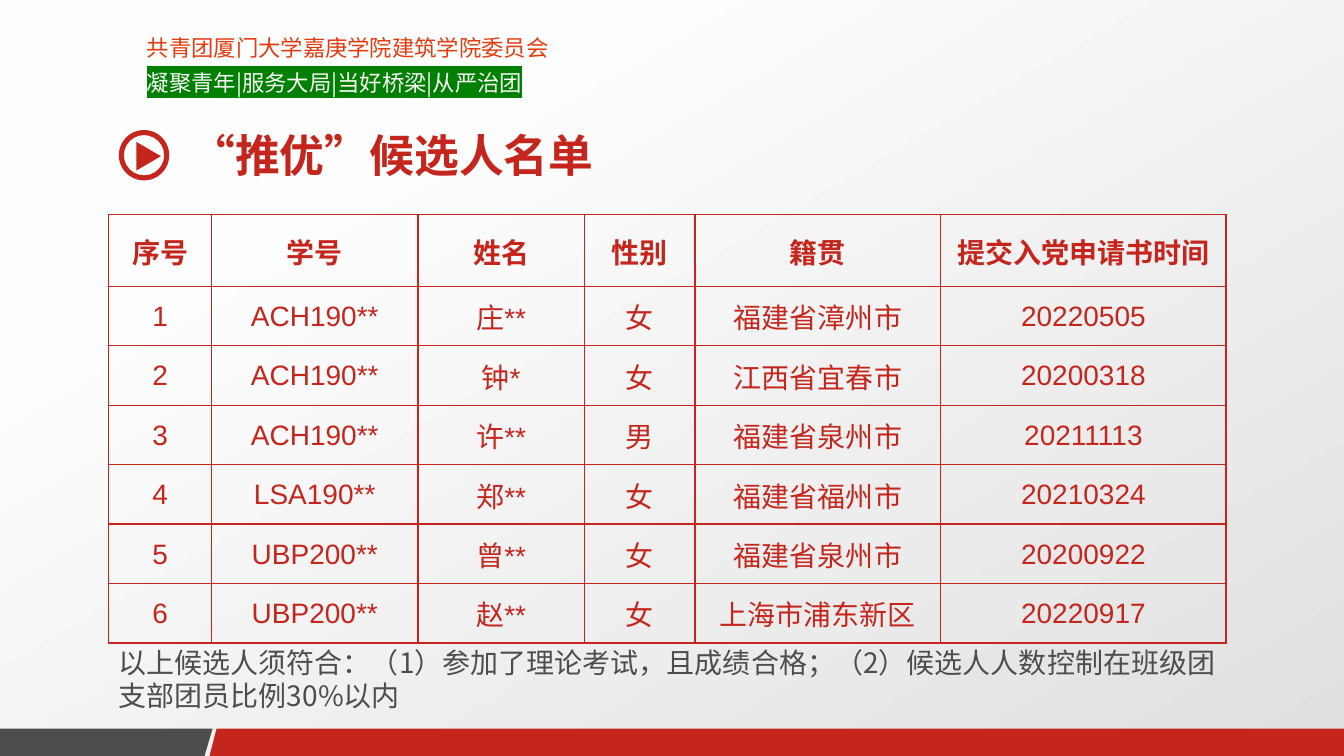
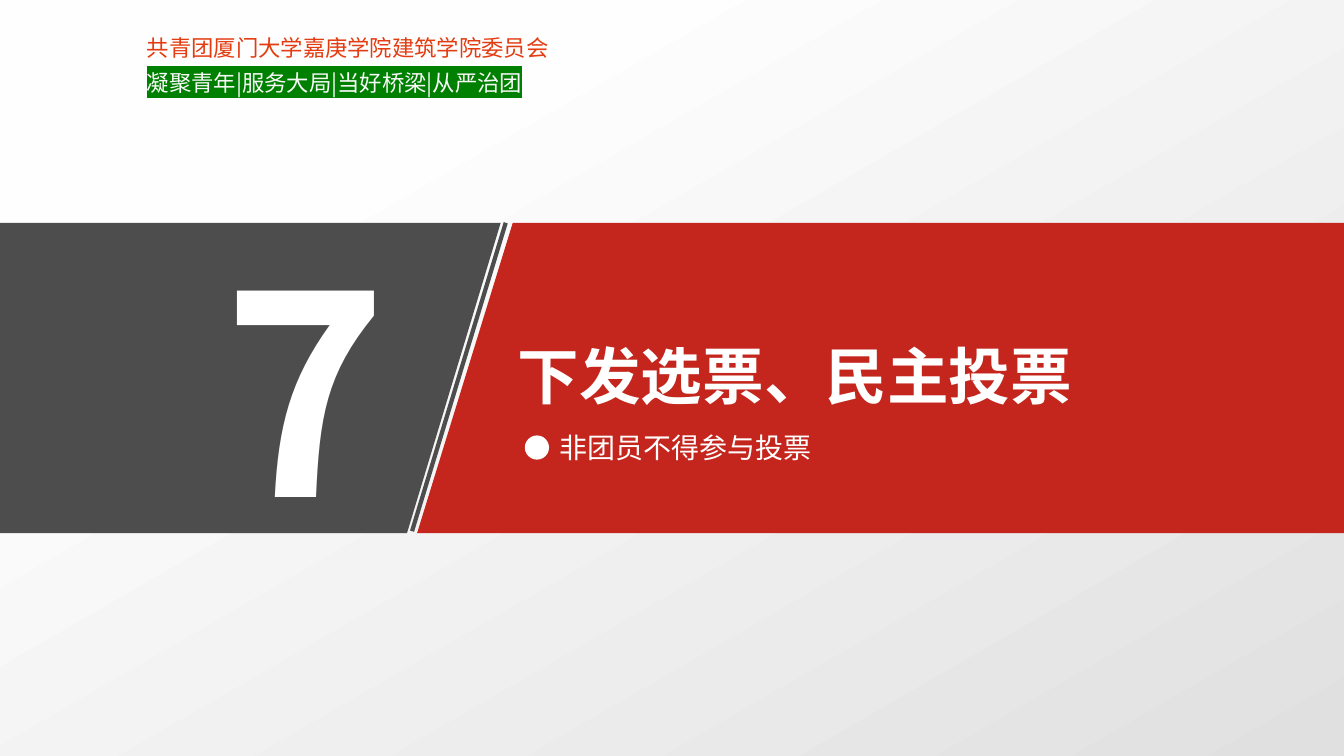
from lxml import etree
from pptx import Presentation
from pptx.dml.color import RGBColor
from pptx.enum import shapes, text
from pptx.oxml.ns import qn
from pptx.util import Inches, Pt

RED = RGBColor(0xC4, 0x26, 0x1D)
GRAY = RGBColor(0x4D, 0x4D, 0x4D)
ORANGE = RGBColor(0xE4, 0x3C, 0x11)
GREEN = RGBColor(0x00, 0x80, 0x00)
WHITE = RGBColor(0xFF, 0xFF, 0xFF)
OFF_WHITE = RGBColor(0xF8, 0xF8, 0xF8)
GRADIENT = ((0.23, RGBColor(0xFE, 0xFE, 0xFE)), (1, RGBColor(0xE0, 0xE0, 0xE0)))

FONT = "Noto Sans CJK SC"
TABLE_FONT = "Arial"
WIDTH, HEIGHT = 13.34, 7.5

COLUMN_WIDTHS = (1.02, 2.05, 1.65, 1.1, 2.44, 2.83)
HEADER_HEIGHT, ROW_HEIGHT = 0.71, 0.59
CANDIDATES = (
    ("序号", "学号", "姓名", "性别", "籍贯", "提交入党申请书时间"),
    ("1", "ACH190**", "庄**", "女", "福建省漳州市", "20220505"),
    ("2", "ACH190**", "钟*", "女", "江西省宜春市", "20200318"),
    ("3", "ACH190**", "许**", "男", "福建省泉州市", "20211113"),
    ("4", "LSA190**", "郑**", "女", "福建省福州市", "20210324"),
    ("5", "UBP200**", "曾**", "女", "福建省泉州市", "20200922"),
    ("6", "UBP200**", "赵**", "女", "上海市浦东新区", "20220917"),
)


# Shared helpers
def format_runs(paragraph, size, color, bold=False, font=FONT):
    for run in paragraph.runs:
        run.font.size = Pt(size)
        run.font.bold = bold
        run.font.color.rgb = color
        run.font.name = font
        latin = run.font._element.find(qn("a:latin"))
        east_asian = etree.Element(qn("a:ea"), typeface=FONT)
        latin.addnext(east_asian)


def highlight_runs(paragraph, color):
    for run in paragraph.runs:
        highlight = etree.Element(qn("a:highlight"))
        etree.SubElement(highlight, qn("a:srgbClr"), val=str(color))
        run.font._element.find(qn("a:solidFill")).addnext(highlight)


def set_text(shape, box, wording, size, color, bold=False, wrap=True):
    """Place a text box or placeholder in front and fill it."""
    shape.left, shape.top, shape.width, shape.height = map(Inches, box)
    shape.element.getparent().append(shape.element)
    frame = shape.text_frame
    frame.text = wording
    frame.word_wrap = wrap
    frame.auto_size = text.MSO_AUTO_SIZE.SHAPE_TO_FIT_TEXT
    frame.vertical_anchor = text.MSO_ANCHOR.TOP
    for paragraph in frame.paragraphs:
        paragraph.alignment = text.PP_ALIGN.LEFT
        paragraph.space_before = Pt(0)
        format_runs(paragraph, size, color, bold)
    return shape


def add_text(slide, box, *args, **options):
    shape = slide.shapes.add_textbox(*map(Inches, box))
    return set_text(shape, box, *args, **options)


def fill_plain(shape, color):
    shape.shadow.inherit = False
    shape.fill.solid()
    shape.fill.fore_color.rgb = color
    shape.line.fill.background()
    return shape


def add_preset(slide, preset, box, color):
    return fill_plain(slide.shapes.add_shape(preset, *map(Inches, box)), color)


def add_polygon(slide, points, color):
    corners = [(Inches(x), Inches(y)) for x, y in points]
    builder = slide.shapes.build_freeform(*corners[0])
    builder.add_line_segments(corners[1:], close=True)
    return fill_plain(builder.convert_to_shape(), color)


def add_slanted_band(slide, top, bottom, gray_edge, red_edge):
    """Gray and red halves; each edge gives its x at top and bottom."""
    add_polygon(slide, ((red_edge[0], top), (WIDTH, top),
                        (WIDTH, bottom), (red_edge[1], bottom)), RED)
    add_polygon(slide, ((0, top), (gray_edge[0], top),
                        (gray_edge[1], bottom), (0, bottom)), GRAY)


# Master: background and header
def style_master(master):
    fill = master.background.fill
    fill.gradient()
    fill.gradient_angle = 300
    for stop, (position, color) in zip(fill.gradient_stops, GRADIENT):
        stop.position = position
        stop.color.rgb = color


def move_header_to_master(slide, master):
    header = add_text(slide, (1.36, 0.29, 5.98, 0.72),
                      "共青团厦门大学嘉庚学院建筑学院委员会\n凝聚青年|服务大局|当好桥梁|从严治团",
                      16, ORANGE)
    for paragraph in header.text_frame.paragraphs:
        paragraph.alignment = text.PP_ALIGN.JUSTIFY
        paragraph.space_after = Pt(6)
    motto = header.text_frame.paragraphs[1]
    for run in motto.runs:
        run.font.color.rgb = OFF_WHITE
    highlight_runs(motto, GREEN)
    master.shapes.element.append(header.element)


# Candidate list
def add_play_icon(slide, left, top, size):
    ring = add_preset(slide, shapes.MSO_SHAPE.DONUT, (left, top, size, size), RED)
    ring.adjustments[0] = 0.1
    base, depth = 0.57 * size, 0.49 * size
    center_x, center_y = left + 0.59 * size, top + 0.52 * size
    arrow = add_preset(slide, shapes.MSO_SHAPE.ISOSCELES_TRIANGLE,
                       (center_x - base / 2, center_y - depth / 2, base, depth), RED)
    arrow.rotation = 90


def style_cell(cell, wording, bold):
    cell.text = wording
    cell.vertical_anchor = text.MSO_ANCHOR.MIDDLE
    cell.margin_left = cell.margin_right = cell.margin_top = Inches(0.01)
    cell.margin_bottom = 0
    cell.fill.background()
    paragraph = cell.text_frame.paragraphs[0]
    paragraph.alignment = text.PP_ALIGN.CENTER
    format_runs(paragraph, 20, RED, bold, TABLE_FONT)
    properties = cell._tc.get_or_add_tcPr()
    for index, side in enumerate(("lnL", "lnR", "lnT", "lnB")):
        border = etree.Element(qn("a:" + side), w=str(Pt(1)))
        solid = etree.SubElement(border, qn("a:solidFill"))
        etree.SubElement(solid, qn("a:srgbClr"), val=str(RED))
        properties.insert(index, border)


def add_candidate_table(slide, left, top):
    row_heights = [HEADER_HEIGHT] + [ROW_HEIGHT] * (len(CANDIDATES) - 1)
    table = slide.shapes.add_table(
        len(CANDIDATES), len(COLUMN_WIDTHS), Inches(left), Inches(top),
        Inches(sum(COLUMN_WIDTHS)), Inches(sum(row_heights))).table
    table.first_row = table.horz_banding = False
    for column, width in zip(table.columns, COLUMN_WIDTHS):
        column.width = Inches(width)
    for index, (row, height) in enumerate(zip(table.rows, row_heights)):
        row.height = Inches(height)
        for cell, wording in zip(row.cells, CANDIDATES[index]):
            style_cell(cell, wording, bold=index == 0)


def build_candidate_slide(slide):
    add_slanted_band(slide, 7.23, HEIGHT, (2.11, 2.03), (2.15, 2.08))
    add_candidate_table(slide, 1.08, 2.13)
    set_text(slide.shapes.title, (1.79, 1.22, 10.32, 0.64),
             "“推优”候选人名单", 32, RED, bold=True)
    add_play_icon(slide, 1.18, 1.29, 0.5)
    add_text(slide, (1.08, 6.35, 11.26, 0.77),
             "以上候选人须符合：（1）参加了理论考试，且成绩合格；"
             "（2）候选人人数控制在班级团支部团员比例30%以内", 20, GRAY)


# Section divider
def build_section_slide(slide):
    top, bottom = 2.21, 5.29
    add_slanted_band(slide, top, bottom, (4.97, 4.04), (5.09, 4.14))
    set_text(slide.shapes.title, (5.04, 3.3, 8.01, 0.84),
             "下发选票、民主投票", 44, WHITE, bold=True)
    add_text(slide, (2.12, 2.12, 1.92, 3.45), "7", 199, WHITE, bold=True, wrap=False)

    stripe = slide.shapes.add_connector(
        shapes.MSO_CONNECTOR.STRAIGHT, Inches(5.02), Inches(top),
        Inches(4.09), Inches(bottom - 0.02))
    stripe.line.color.rgb = GRAY
    stripe.line.width = Pt(3)
    etree.SubElement(stripe.element.spPr, qn("a:effectLst"))

    add_preset(slide, shapes.MSO_SHAPE.OVAL, (5.21, 4.32, 0.24, 0.24), WHITE)
    set_text(slide.placeholders[1], (5.45, 4.22, 6.65, 0.44),
             "非团员不得参与投票", 20, WHITE)


def main():
    presentation = Presentation()
    presentation.slide_width, presentation.slide_height = Inches(WIDTH), Inches(HEIGHT)
    master = presentation.slide_master
    style_master(master)

    layouts = presentation.slide_layouts
    candidate_slide = presentation.slides.add_slide(layouts.get_by_name("Title Only"))
    move_header_to_master(candidate_slide, master)
    build_candidate_slide(candidate_slide)
    build_section_slide(presentation.slides.add_slide(layouts.get_by_name("Section Header")))
    presentation.save("out.pptx")


if __name__ == "__main__":
    main()
